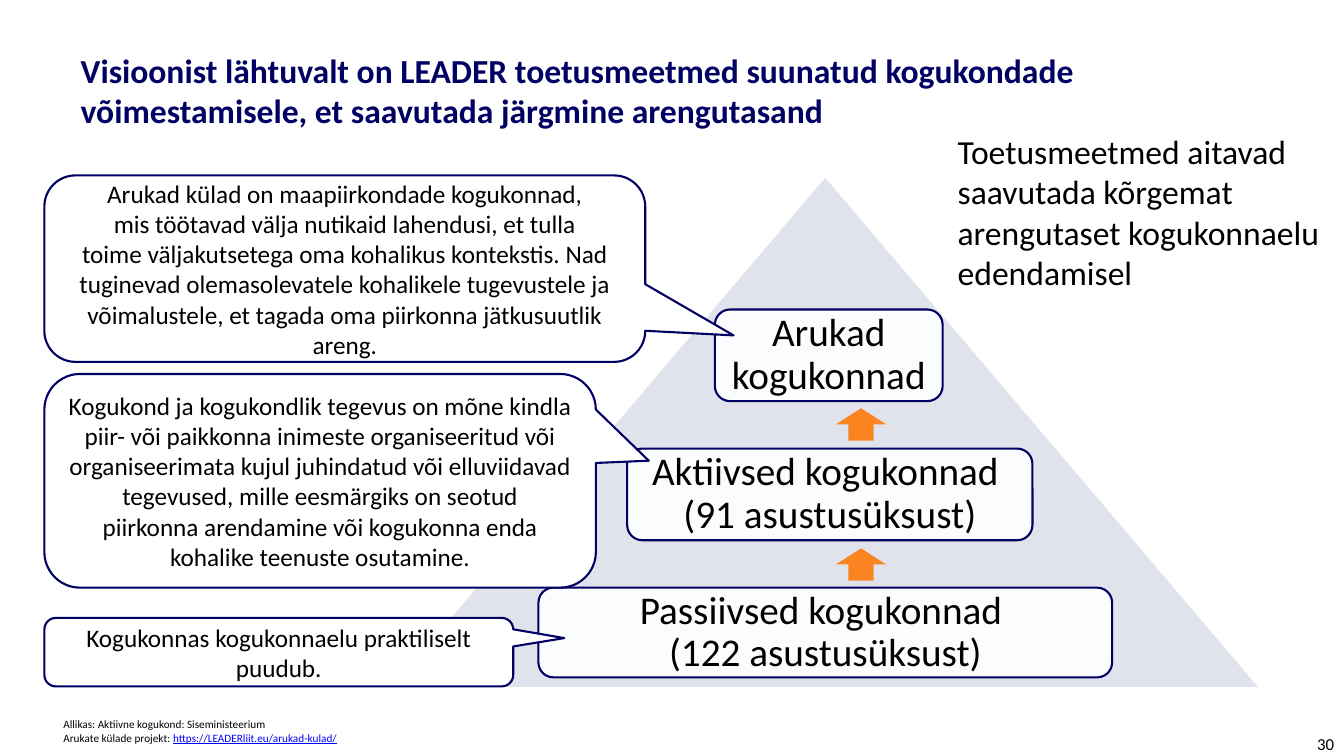
import dataclasses
import typing

import pptx
import pptx.dml.color
import pptx.enum.shapes
import pptx.enum.text
import pptx.oxml
import pptx.oxml.ns
import pptx.util

PX = 9144  # EMU per px, 100 px to the inch
FONT = "Calibri"
NAVY, BLACK, WHITE = "010163", "000000", "FFFFFF"
PALE, ORANGE, LINK = "E0E3EC", "FB8421", "0000FF"

SHAPES = pptx.enum.shapes.MSO_SHAPE
ALIGN = pptx.enum.text.PP_ALIGN
ANCHOR = pptx.enum.text.MSO_ANCHOR


@dataclasses.dataclass(frozen=True)
class Box:
    left: int
    top: int
    width: int
    height: int

    def emu(self) -> tuple[int, int, int, int]:
        return self.left * PX, self.top * PX, self.width * PX, self.height * PX


@dataclasses.dataclass(frozen=True)
class Level:
    box: Box
    lines: tuple[str, ...]


@dataclasses.dataclass(frozen=True)
class Callout:
    box: Box
    tail: tuple[float, float]
    lines: tuple[str, ...]


TRIANGLE = Box(386, 174, 865, 509)
LEVELS = (
    Level(Box(709, 307, 226, 91), ("Arukad kogukonnad",)),
    Level(Box(622, 445, 402, 91), ("Aktiivsed kogukonnad ", "(91 asustusüksust)")),
    Level(Box(534, 583, 569, 89), ("Passiivsed kogukonnad ", "(122 asustusüksust)")),
)
ARROWS = tuple(Box(829, top, 50, 32) for top in (405, 544))
CALLOUTS = (
    Callout(Box(44, 174, 596, 185), (0.647, 0.358), (
        "Arukad külad on maapiirkondade kogukonnad,",
        "mis töötavad välja nutikaid lahendusi, et tulla",
        "toime väljakutsetega oma kohalikus kontekstis. Nad",
        "tuginevad olemasolevatele kohalikele tugevustele ja",
        "võimalustele, et tagada oma piirkonna jätkusuutlik",
        "areng.",
    )),
    Callout(Box(44, 371, 547, 212), (0.596, -0.094), (
        "Kogukond ja kogukondlik tegevus on mõne kindla piir- või paikkonna "
        "inimeste organiseeritud või",
        "organiseerimata kujul juhindatud või elluviidavad tegevused, "
        "mille eesmärgiks on seotud",
        "piirkonna arendamine või kogukonna enda kohalike teenuste osutamine.",
    )),
    Callout(Box(44, 613, 465, 68), (0.609, -0.205),
            ("Kogukonnas kogukonnaelu praktiliselt puudub.",)),
)


def rgb(value: str) -> pptx.dml.color.RGBColor:
    return pptx.dml.color.RGBColor.from_string(value)


def write(shape: typing.Any, lines: typing.Sequence[str], size: int,
          align: ALIGN = ALIGN.LEFT, anchor: ANCHOR = ANCHOR.TOP,
          spacing: float = 1.0, color: str = BLACK, bold: bool = False) -> None:
    """Fill a shape with one paragraph per line."""
    frame = shape.text_frame
    frame.text = "\n".join(lines)
    frame.word_wrap = True
    frame.vertical_anchor = anchor
    for paragraph in frame.paragraphs:
        paragraph.alignment = align
        paragraph.line_spacing = spacing
        paragraph.font.name = FONT
        paragraph.font.size = pptx.util.Pt(size)
        paragraph.font.bold = bold
        paragraph.font.color.rgb = rgb(color)


def add_shape(slide: typing.Any, kind: SHAPES, box: Box, fill: str,
              line: str | None = None, width: float = 1.5) -> typing.Any:
    shape = slide.shapes.add_shape(kind, *box.emu())
    shape.shadow.inherit = False
    shape.fill.solid()
    shape.fill.fore_color.rgb = rgb(fill)
    if line is None:
        shape.line.fill.background()
    else:
        shape.line.color.rgb = rgb(line)
        shape.line.width = pptx.util.Pt(width)
    return shape


def set_opacity(shape: typing.Any, percent: int) -> None:
    color = shape.fill._xPr.find(".//" + pptx.oxml.ns.qn("a:srgbClr"))
    color.append(pptx.oxml.parse_xml(
        f'<a:alpha {pptx.oxml.ns.nsdecls("a")} val="{percent * 1000}"/>'))


def add_level(slide: typing.Any, level: Level) -> None:
    shape = add_shape(slide, SHAPES.ROUNDED_RECTANGLE, level.box, WHITE, NAVY)
    set_opacity(shape, 90)
    frame = shape.text_frame
    frame.margin_left = frame.margin_right = 12 * PX
    frame.margin_top = frame.margin_bottom = 12 * PX
    write(shape, level.lines, 28, ALIGN.CENTER, ANCHOR.MIDDLE, 0.9)


def add_callout(slide: typing.Any, callout: Callout) -> None:
    shape = add_shape(slide, SHAPES.ROUNDED_RECTANGULAR_CALLOUT, callout.box, WHITE, NAVY)
    for index, value in enumerate((*callout.tail, 0.167)):
        shape.adjustments[index] = value
    write(shape, callout.lines, 18, ALIGN.CENTER, ANCHOR.MIDDLE)


def add_text(slide: typing.Any, box: Box, lines: typing.Sequence[str], size: int,
             align: ALIGN = ALIGN.LEFT, anchor: ANCHOR = ANCHOR.TOP) -> typing.Any:
    shape = slide.shapes.add_textbox(*box.emu())
    write(shape, lines, size, align, anchor)
    return shape


def add_title(slide: typing.Any) -> None:
    title = slide.shapes.title
    title.left, title.top, title.width, title.height = Box(70, 11, 1014, 157).emu()
    write(title, ("Visioonist lähtuvalt on LEADER toetusmeetmed suunatud kogukondade "
                  "võimestamisele, et saavutada järgmine arengutasand",),
          24, anchor=ANCHOR.MIDDLE, color=NAVY, bold=True)


def add_sources(slide: typing.Any) -> None:
    sources = add_text(slide, Box(53, 707, 1132, 37),
                       ("Allikas: Aktiivne kogukond: Siseministeerium",
                        "Arukate külade projekt: "), 8)
    address = sources.text_frame.paragraphs[-1].add_run()
    address.text = "https://LEADERliit.eu/arukad-kulad/"
    address.font.underline = True
    address.font.color.rgb = rgb(LINK)


def main() -> None:
    presentation = pptx.Presentation()
    presentation.slide_width, presentation.slide_height = 1333 * PX, 750 * PX
    slide = presentation.slides.add_slide(presentation.slide_layouts[5])
    add_title(slide)
    add_shape(slide, SHAPES.ISOSCELES_TRIANGLE, TRIANGLE, PALE, WHITE, 2)
    for level in LEVELS:
        add_level(slide, level)
    for arrow in ARROWS:
        add_shape(slide, SHAPES.UP_ARROW, arrow, ORANGE)
    add_text(slide, Box(940, 125, 383, 172),
             ("Toetusmeetmed aitavad saavutada kõrgemat arengutaset "
              "kogukonnaelu edendamisel",), 24)
    for callout in CALLOUTS:
        add_callout(slide, callout)
    add_sources(slide)
    add_text(slide, Box(1171, 725, 162, 25), ("30",), 12, ALIGN.RIGHT, ANCHOR.MIDDLE)
    presentation.save("out.pptx")


if __name__ == "__main__":
    main()
